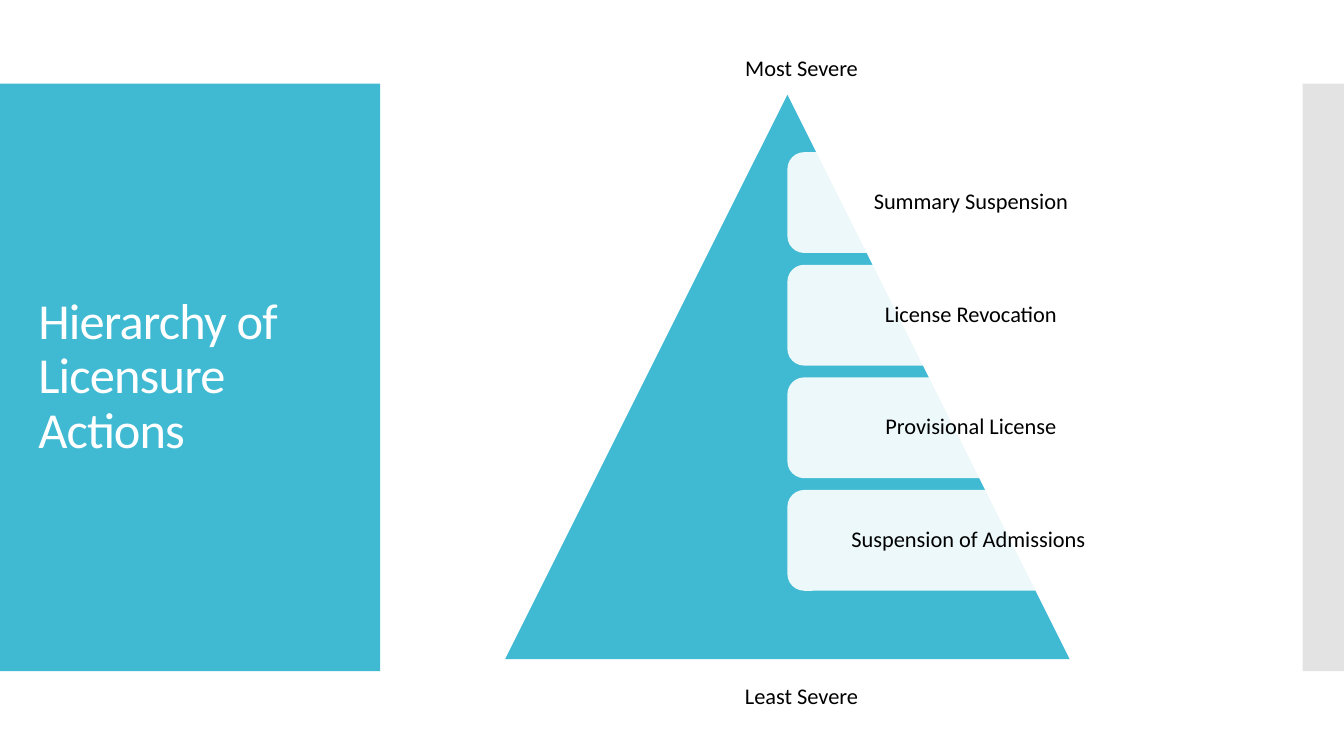
from dataclasses import dataclass

import pptx
import pptx.dml.color
import pptx.enum.shapes
import pptx.enum.text
import pptx.oxml.ns
import pptx.oxml.xmlchemy
import pptx.slide
import pptx.text.text
import pptx.util
from lxml import etree
from pptx.util import Inches

FONT = "Calibri"
TEAL = "40BAD2"
WHITE = "FFFFFF"
BLACK = "000000"
GRAY = "C8C8C8"
SHAPE = pptx.enum.shapes.MSO_SHAPE
ALIGN = pptx.enum.text.PP_ALIGN
ANCHOR = pptx.enum.text.MSO_ANCHOR

CARD_TOP = 1.51
CARD_PITCH = 1.117


@dataclass(frozen=True)
class Box:
    left: float
    top: float
    width: float
    height: float

    def lengths(self) -> tuple:
        return tuple(Inches(v) for v in (self.left, self.top, self.width, self.height))


@dataclass(frozen=True)
class Block:
    kind: SHAPE
    box: Box
    color: str
    opacity: int = 100


@dataclass(frozen=True)
class Label:
    text: str
    box: Box


PANELS = [
    Block(SHAPE.RECTANGLE, Box(0, 0.83, 3.77, 5.83), TEAL),
    Block(SHAPE.RECTANGLE, Box(12.92, 0.83, 0.42, 5.83), GRAY, 50),
]
PYRAMID = Block(SHAPE.ISOSCELES_TRIANGLE, Box(5.01, 0.94, 5.6, 5.6), TEAL)
ACTIONS = [
    "Summary Suspension",
    "License Revocation",
    "Provisional License",
    "Suspension of Admissions ",
]
LABELS = [
    Label("Most Severe", Box(5.79, 0.49, 4.32, 0.37)),
    Label("Least Severe", Box(6.85, 6.72, 2.2, 0.37)),
]


def rgb(color: str) -> pptx.dml.color.RGBColor:
    return pptx.dml.color.RGBColor.from_string(color)


def add_run(p: pptx.text.text._Paragraph, text: str, size: int, color: str) -> pptx.text.text._Run:
    r = p.add_run()
    r.text = text
    r.font.name = FONT
    r.font.size = pptx.util.Pt(size)
    r.font.color.rgb = rgb(color)
    return r


def add_block(s: pptx.slide.Slide, block: Block):
    sp = s.shapes.add_shape(block.kind, *block.box.lengths())
    sp.shadow.inherit = False
    sp.line.fill.background()
    sp.fill.solid()
    sp.fill.fore_color.rgb = rgb(block.color)
    if block.opacity < 100:
        clr = sp._element.spPr.find(".//" + pptx.oxml.ns.qn("a:srgbClr"))
        alpha = etree.SubElement(clr, pptx.oxml.ns.qn("a:alpha"))
        alpha.set("val", str(block.opacity * 1000))
    return sp


def add_card(s: pptx.slide.Slide, index: int, text: str) -> None:
    box = Box(7.81, CARD_TOP + index * CARD_PITCH, 3.64, 1)
    sp = add_block(s, Block(SHAPE.ROUNDED_RECTANGLE, box, WHITE, 90))
    tf = sp.text_frame
    tf.word_wrap = True
    tf.vertical_anchor = ANCHOR.MIDDLE
    tf.margin_left = tf.margin_right = Inches(0.07)
    tf.margin_top = tf.margin_bottom = Inches(0.07)
    p = tf.paragraphs[0]
    p.alignment = ALIGN.CENTER
    p.line_spacing = 0.9
    add_run(p, text, 16, BLACK)


def add_label(s: pptx.slide.Slide, label: Label) -> None:
    tf = s.shapes.add_textbox(*label.box.lengths()).text_frame
    tf.word_wrap = True
    tf.auto_size = pptx.enum.text.MSO_AUTO_SIZE.SHAPE_TO_FIT_TEXT
    p = tf.paragraphs[0]
    p.alignment = ALIGN.CENTER
    add_run(p, label.text, 16, BLACK)


def format_title(s: pptx.slide.Slide, text: str) -> None:
    sp = s.shapes.title
    sp.left, sp.top, sp.width, sp.height = Box(0.28, 1.23, 3.22, 5.03).lengths()
    s.shapes._spTree.append(sp._element)
    tf = sp.text_frame
    tf.word_wrap = True
    tf.auto_size = pptx.enum.text.MSO_AUTO_SIZE.NONE
    tf.vertical_anchor = ANCHOR.MIDDLE
    p = tf.paragraphs[0]
    p.alignment = ALIGN.LEFT
    p.line_spacing = 0.9
    r = add_run(p, text, 36, WHITE)
    r.font._element.set("spc", "-60")


def main() -> None:
    prs = pptx.Presentation()
    prs.slide_width = Inches(13.33)
    prs.slide_height = Inches(7.5)
    s = prs.slides.add_slide(prs.slide_layouts.get_by_name("Title Only"))
    for panel in PANELS:
        add_block(s, panel)
    format_title(s, "Hierarchy of Licensure Actions")
    add_block(s, PYRAMID)
    for index, action in enumerate(ACTIONS):
        add_card(s, index, action)
    for label in LABELS:
        add_label(s, label)
    prs.save("out.pptx")


if __name__ == "__main__":
    main()
